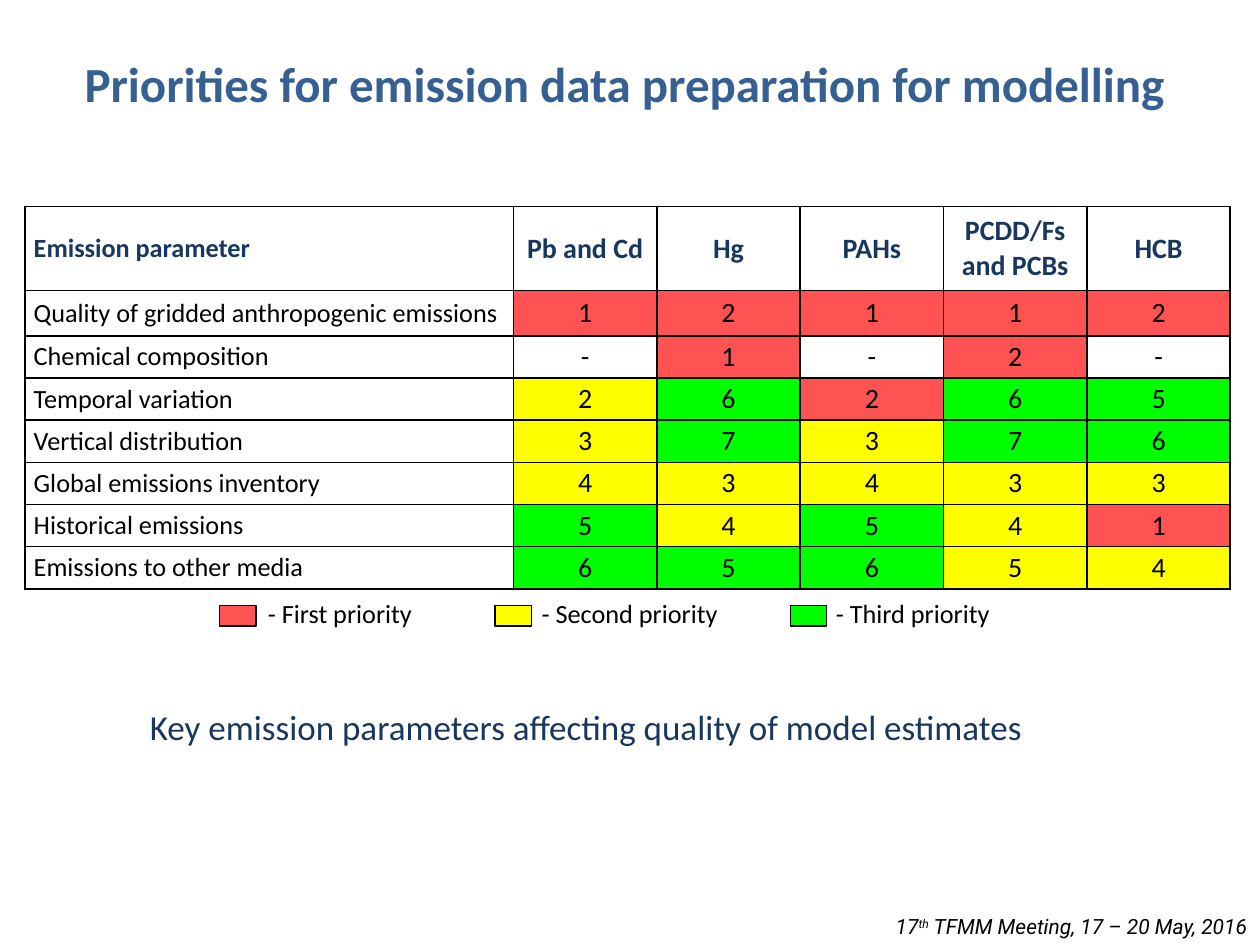
from lxml import etree
from pptx import Presentation
from pptx.dml.color import RGBColor
from pptx.enum.shapes import MSO_SHAPE
from pptx.enum.text import MSO_ANCHOR, MSO_AUTO_SIZE, PP_ALIGN
from pptx.oxml.ns import qn
from pptx.util import Cm, Pt

LEFT, CENTER, RIGHT = PP_ALIGN.LEFT, PP_ALIGN.CENTER, PP_ALIGN.RIGHT
MIDDLE, BOTTOM, TOP = MSO_ANCHOR.MIDDLE, MSO_ANCHOR.BOTTOM, MSO_ANCHOR.TOP
RECTANGLE = MSO_SHAPE.RECTANGLE
NO_AUTOFIT = MSO_AUTO_SIZE.NONE
BLACK, NAVY, BLUE = "000000", "17375E", "376092"
color = RGBColor.from_string


def write_text(frame, text, size, hex_color=BLACK, font="Calibri", bold=False,
               italic=False, align=LEFT, anchor=TOP):
    frame.word_wrap = True
    frame.vertical_anchor = anchor
    paragraph = frame.paragraphs[0]
    paragraph.alignment = align
    for part in [text] if isinstance(text, str) else text:
        run = paragraph.add_run()
        run.text = part
        run.font.name, run.font.size = font, Pt(size)
        run.font.bold, run.font.italic = bold, italic
        run.font.color.rgb = color(hex_color)
    return paragraph


def set_borders(cell, visible):
    properties = cell._tc.get_or_add_tcPr()
    for side in "LRTB":
        line = etree.SubElement(properties, qn(f"a:ln{side}"), w=str(Pt(1)))
        if side in visible:
            fill = etree.SubElement(line, qn("a:solidFill"))
            etree.SubElement(fill, qn("a:srgbClr"), val=BLACK)
        else:
            etree.SubElement(line, qn("a:noFill"))


prs = Presentation()
prs.slide_width, prs.slide_height = Cm(25.4), Cm(19.05)
slide = prs.slides.add_slide(prs.slide_layouts[5])

title = slide.shapes.title
title.left, title.top, title.width, title.height = Cm(0), Cm(0.82), Cm(25.4), Cm(1.7)
title.text_frame.auto_size = NO_AUTOFIT
write_text(title.text_frame, "Priorities for emission data preparation for modelling ",
           28, BLUE, bold=True, align=CENTER, anchor=MIDDLE)

priority_colors = {"R": "FF5353", "Y": "FFFF00", "G": "00FF00"}
headings = ["Emission parameter", "Pb and Cd", "Hg", "PAHs", "PCDD/Fs and PCBs", "HCB"]
parameters = [
    ("Quality of gridded anthropogenic emissions", "12112", "RRRRR"),
    ("Chemical composition", "-1-2-", "-R-R-"),
    ("Temporal variation", "26265", "YGRGG"),
    ("Vertical distribution", "37376", "YGYGG"),
    ("Global emissions inventory", "43433", "YYYYY"),
    ("Historical emissions", "54541", "GYGYR"),
    ("Emissions to other media", "65654", "GGGYY"),
]
row_heights = [1.7, 0.91] + [0.85] * 7
column_widths = [9.85] + [2.89] * 5

table = slide.shapes.add_table(len(row_heights), len(column_widths), Cm(0.5), Cm(4.16),
                               Cm(sum(column_widths)), Cm(sum(row_heights))).table
table.first_row = table.horz_banding = False
for row, height in zip(table.rows, row_heights):
    row.height = Cm(height)
for column, width in zip(table.columns, column_widths):
    column.width = Cm(width)
for cell in table.iter_cells():
    cell.margin_left = cell.margin_right = Cm(0.18)
    cell.margin_top = cell.margin_bottom = Cm(0)

contents = [headings] + [[name, *ranks] for name, ranks, _ in parameters]
priorities = ["-" * 6] + ["-" + codes for _, _, codes in parameters]
for r, (texts, codes) in enumerate(zip(contents, priorities)):
    for c, (text, code) in enumerate(zip(texts, codes)):
        cell = table.cell(r, c)
        set_borders(cell, "LRTB")
        if code in priority_colors:
            cell.fill.solid()
            cell.fill.fore_color.rgb = color(priority_colors[code])
        else:
            cell.fill.background()
        write_text(cell.text_frame, text, 16 if c else 15, BLACK if r else NAVY,
                   bold=r == 0, align=CENTER if c else LEFT)
        cell.vertical_anchor = MIDDLE

legend_row = len(row_heights) - 1
legend = table.cell(legend_row, 0)
legend.merge(table.cell(legend_row, len(column_widths) - 1))
for cell in table.rows[legend_row].cells:
    set_borders(cell, "T")
    cell.fill.background()
entries = legend.text_frame.paragraphs[0]
tab_list = etree.SubElement(entries._p.get_or_add_pPr(), qn("a:tabLst"))
for position in (4.72, 10.24, 16.17):
    etree.SubElement(tab_list, qn("a:tab"), pos=str(Cm(position)), algn="l")
write_text(legend.text_frame,
           "\t- First priority\t- Second priority\t- Third priority", 15)
entries.space_after = Pt(1)
legend.vertical_anchor = BOTTOM

for left, fill_color in zip((4.42, 9.98, 15.93), priority_colors.values()):
    swatch = slide.shapes.add_shape(RECTANGLE, Cm(left), Cm(12.2), Cm(0.74), Cm(0.42))
    swatch.shadow.inherit = False
    swatch.fill.solid()
    swatch.fill.fore_color.rgb = color(fill_color)
    swatch.line.color.rgb = color(BLACK)
    swatch.line.width = Pt(0.75)

caption = slide.shapes.add_textbox(Cm(2.77), Cm(14.1), Cm(21.44), Cm(1.12))
write_text(caption.text_frame,
           "Key emission parameters affecting quality of model estimates", 20, NAVY)

meeting = slide.shapes.add_textbox(Cm(16.99), Cm(18.29), Cm(8.41), Cm(0.76))
meeting_line = write_text(meeting.text_frame, ["17", "th", " TFMM Meeting, 17 – 20 May, 2016"],
                          12, font="Roboto", italic=True, align=RIGHT)
meeting_line.runs[1]._r.get_or_add_rPr().set("baseline", "30000")

prs.save("out.pptx")
